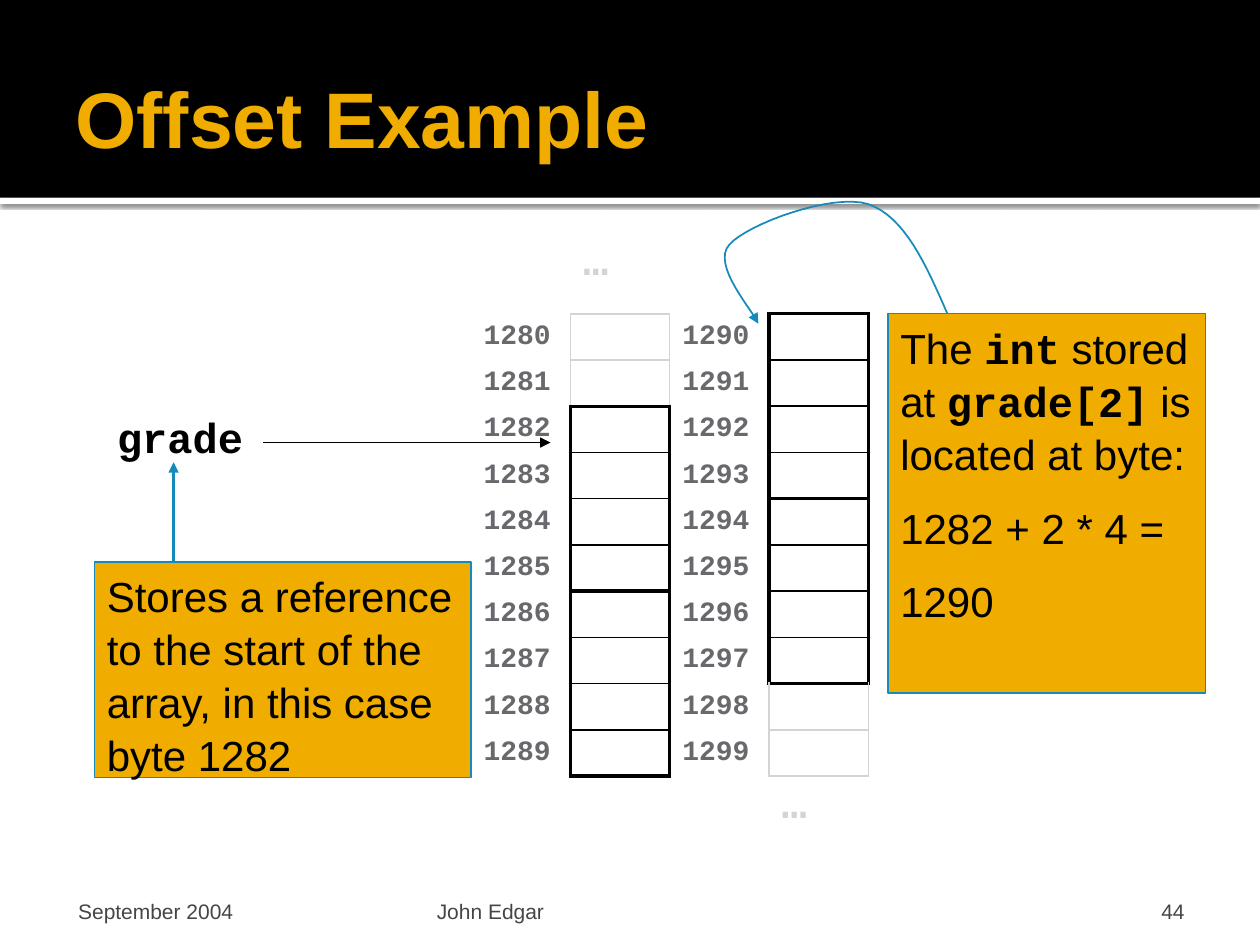
from lxml import etree
from pptx import Presentation
from pptx.dml.color import RGBColor
from pptx.enum.shapes import MSO_CONNECTOR, MSO_SHAPE
from pptx.enum.text import MSO_ANCHOR as Anchor, PP_ALIGN as Align
from pptx.oxml import parse_xml
from pptx.oxml.ns import nsdecls, qn
from pptx.util import Pt

BLACK, WHITE, GOLD, BLUE = "000000", "FFFFFF", "F0AD00", "168BBA"
FADED, LABEL, FOOTER = "D4D4D6", "68686D", "454545"
SANS, MONO = "Arial", "Courier New"

# Content: paragraphs are lists of (text, is_code) runs
TITLE = "Offset Example"
VARIABLE = "grade"
INT_NOTE = [
    [("The ", False), ("int", True), (" stored at ", False),
     ("grade[2]", True), (" is located at byte:", False)],
    [("1282 + 2 * 4 =", False)],
    [("1290", False)],
]
REFERENCE_NOTE = [[("Stores a reference to the start of the array, in this case byte 1282", False)]]
FOOTERS = [  # text, left, width, left inset, alignment
    ("September 2004", 36, 168, 8.64, Align.LEFT),
    ("John Edgar", 246, 228, 3.6, Align.LEFT),
    ("44", 516, 168, 7.2, Align.RIGHT),
]

# Memory: two columns of ten bytes, ints of four bytes in the array
FIRST_BYTE, BYTES_PER_COLUMN, COLUMNS = 1280, 10, 2
ARRAY_START, ARRAY_END, INT_SIZE = 1282, 1298, 4
TABLE_LEFT, TABLE_TOP, CELL_WIDTH = 269.2, 122.4, 56.75
ROW_HEIGHTS = [56.9] + [25.35] * BYTES_PER_COLUMN + [34.5]

# Curve from the note to byte 1290: start, then Bezier triples
CURVE_START = (541.4, 179.3)
CURVE = [
    [(529.2, 151.2), (517, 123.8), (496.1, 116.6)],
    [(475.2, 110.2), (427, 128.2), (416.9, 139.7)],
    [(406.1, 151.2), (430.6, 177.8), (433.4, 185)],
]


def color(value):
    return RGBColor.from_string(value)


def set_font(font, size, name, tint, bold=False):
    font.size, font.name, font.bold = Pt(size), name, bold
    font.color.rgb = color(tint)


def add_arrowhead(shape):
    etree.SubElement(shape.line._get_or_add_ln(), qn("a:tailEnd"), type="triangle")


def add_rect(left, top, width, height, fill, outline=None):
    rect = slide.shapes.add_shape(MSO_SHAPE.RECTANGLE, Pt(left), Pt(top), Pt(width), Pt(height))
    rect.shadow.inherit = False
    rect.fill.solid()
    rect.fill.fore_color.rgb = color(fill)
    if outline:
        rect.line.color.rgb = color(outline)
        rect.line.width = Pt(0.75)
    else:
        rect.line.fill.background()
    return rect


def add_text(text, left, top, width, height, font, anchor=Anchor.TOP,
             insets=(7.2, 3.6, 7.2, 3.6), align=Align.LEFT, spacing=1.0):
    frame = slide.shapes.add_textbox(Pt(left), Pt(top), Pt(width), Pt(height)).text_frame
    frame.word_wrap, frame.vertical_anchor = True, anchor
    frame.margin_left, frame.margin_top, frame.margin_right, frame.margin_bottom = map(Pt, insets)
    paragraph = frame.paragraphs[0]
    paragraph.text, paragraph.alignment, paragraph.line_spacing = text, align, spacing
    set_font(paragraph.font, *font)


def add_note(paragraphs, left, top, width, height):
    frame = add_rect(left, top, width, height, GOLD, BLUE).text_frame
    frame.word_wrap, frame.vertical_anchor = True, Anchor.TOP
    for i, runs in enumerate(paragraphs):
        paragraph = frame.add_paragraph() if i else frame.paragraphs[0]
        paragraph.alignment, paragraph.line_spacing = Align.LEFT, 1.05
        paragraph.space_before = Pt(12 if i else 0)
        for text, is_code in runs:
            run = paragraph.add_run()
            run.text = text
            set_font(run.font, 24, MONO if is_code else SANS, BLACK, is_code)


def add_arrow(x1, y1, x2, y2, tint, width):
    arrow = slide.shapes.add_connector(MSO_CONNECTOR.STRAIGHT, Pt(x1), Pt(y1), Pt(x2), Pt(y2))
    arrow.line.color.rgb, arrow.line.width = color(tint), Pt(width)
    add_arrowhead(arrow)
    etree.SubElement(arrow._element.spPr, qn("a:effectLst"))


def byte_borders():
    """Map each (row, column) to its borders; neighbours share their edges."""
    opposite = {"L": ("R", 0, -1), "R": ("L", 0, 1), "T": ("B", -1, 0), "B": ("T", 1, 0)}
    borders = {}
    places = [divmod(i, BYTES_PER_COLUMN) for i in range(BYTES_PER_COLUMN * COLUMNS)]
    for in_array in (False, True):  # array edges override the faded ones
        for block, offset in places:
            address = FIRST_BYTE + block * BYTES_PER_COLUMN + offset
            if (ARRAY_START <= address < ARRAY_END) != in_array:
                continue
            row, col = offset + 1, 2 * block + 1
            phase = (address - ARRAY_START) % INT_SIZE
            thick = {"L": True, "R": True, "T": phase == 0, "B": phase == INT_SIZE - 1}
            for side, (other, down, right) in opposite.items():
                edge = (BLACK, 2.25 if thick[side] else 1) if in_array else (FADED, 1)
                borders.setdefault((row, col), {})[side] = edge
                borders.setdefault((row + down, col + right), {})[other] = edge
    return borders


def add_memory():
    rows, cols = len(ROW_HEIGHTS), 2 * COLUMNS
    frame = slide.shapes.add_table(rows, cols, Pt(TABLE_LEFT), Pt(TABLE_TOP),
                                   Pt(CELL_WIDTH * cols), Pt(sum(ROW_HEIGHTS)))
    memory = frame.table
    memory.first_row = memory.horz_banding = False
    memory._tbl.tblPr.find(qn("a:tableStyleId")).text = "{2D5ABB26-0587-4C30-8999-92F81FD0307C}"
    for column in memory.columns:
        column.width = Pt(CELL_WIDTH)
    for row, height in zip(memory.rows, ROW_HEIGHTS):
        row.height = Pt(height)

    texts = {(0, 1): "…", (rows - 1, cols - 1): "…"}
    for i in range(BYTES_PER_COLUMN * COLUMNS):
        block, offset = divmod(i, BYTES_PER_COLUMN)
        texts[offset + 1, 2 * block] = str(FIRST_BYTE + i)

    borders = byte_borders()
    for r in range(rows):
        for c in range(cols):
            cell, text = memory.cell(r, c), texts.get((r, c), "")
            cell.vertical_anchor = Anchor.MIDDLE
            paragraph = cell.text_frame.paragraphs[0]
            if text:
                paragraph.text = text
                set_font(paragraph.font, *((24, MONO, FADED) if text == "…" else (16, MONO, LABEL)), True)
            else:
                cell.margin_top = cell.margin_bottom = 0
                paragraph.font.size = Pt(12)
            properties = cell._tc.get_or_add_tcPr()
            for side in "LRTB":
                if side in borders.get((r, c), {}):
                    tint, width = borders[r, c][side]
                    properties.append(parse_xml(
                        f'<a:ln{side} {nsdecls("a")} w="{Pt(width)}"><a:solidFill>'
                        f'<a:srgbClr val="{tint}"/></a:solidFill></a:ln{side}>'))
            cell.fill.background()


def add_curve(start, segments, steps=16):
    points, origin = [], start
    for segment in segments:
        for t in (step / steps for step in range(1, steps + 1)):
            weights = ((1 - t) ** 3, 3 * t * (1 - t) ** 2, 3 * t * t * (1 - t), t ** 3)
            controls = [origin, *segment]
            points.append(tuple(Pt(sum(w * p[axis] for w, p in zip(weights, controls)))
                                for axis in (0, 1)))
        origin = segment[-1]
    builder = slide.shapes.build_freeform(Pt(start[0]), Pt(start[1]))
    builder.add_line_segments(points, close=False)
    curve = builder.convert_to_shape()
    curve.shadow.inherit = False
    curve.fill.background()
    curve.line.color.rgb, curve.line.width = color(BLUE), Pt(1)
    add_arrowhead(curve)


prs = Presentation()
prs.slide_width, prs.slide_height = Pt(720), Pt(540)
slide = prs.slides.add_slide(prs.slide_layouts[6])

# Header band with a shadowed white strip below it
strip = add_rect(0, 113, 720, 3.6, WHITE)
strip._element.spPr.find(qn("a:effectLst")).append(parse_xml(
    f'<a:outerShdw {nsdecls("a")} blurRad="{Pt(2.5)}" dist="{Pt(0.8)}" dir="5400000">'
    f'<a:srgbClr val="{BLACK}"><a:alpha val="60000"/></a:srgbClr></a:outerShdw>'))
add_rect(0, 0, 720, 113, BLACK)
add_text(TITLE, 36, 21.6, 648, 90, (45, SANS, GOLD, True), Anchor.MIDDLE, (7.2, 3.6, 3.6, 3.6))

# Memory table and footer
add_memory()
for text, left, width, inset, align in FOOTERS:
    right_inset = 7.2 if align == Align.RIGHT else 3.6
    add_text(text, left, 491.8, width, 36, (12, SANS, FOOTER), Anchor.BOTTOM,
             (inset, 3.6, right_inset, 0), align)

# Variable, notes and arrows
add_note(INT_NOTE, 507.4, 179.3, 181.6, 216.7)
add_text(VARIABLE, 59.8, 230.4, 90.7, 36, (24, MONO, BLACK, True), spacing=1.05)
add_note(REFERENCE_NOTE, 54, 321.1, 215.2, 123.1)
add_arrow(99.2, 321.1, 99.2, 264.2, BLUE, 1.5)
add_arrow(150.5, 252.9, 314.6, 252.9, BLACK, 0.75)
add_curve(CURVE_START, CURVE)

prs.save("out.pptx")
